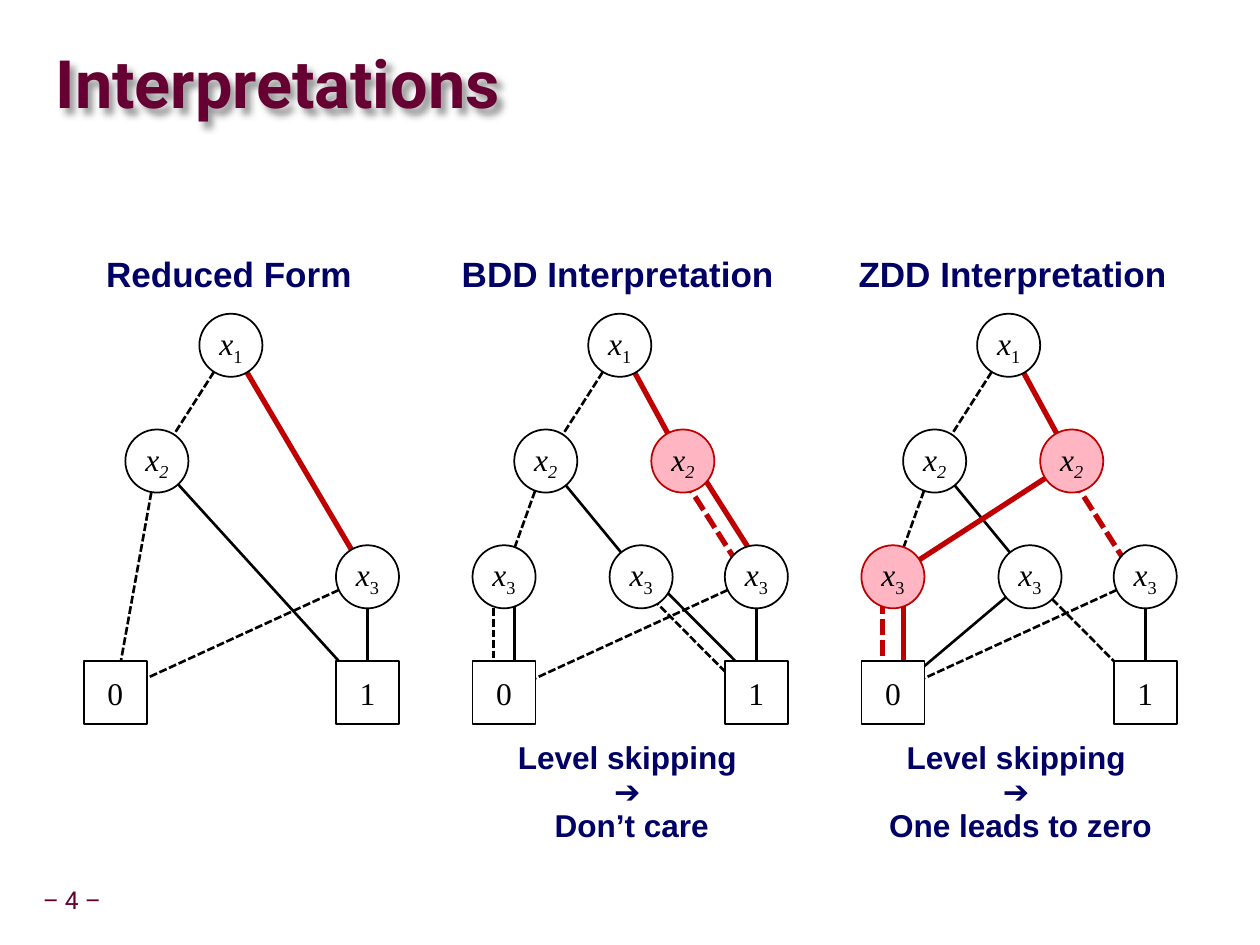
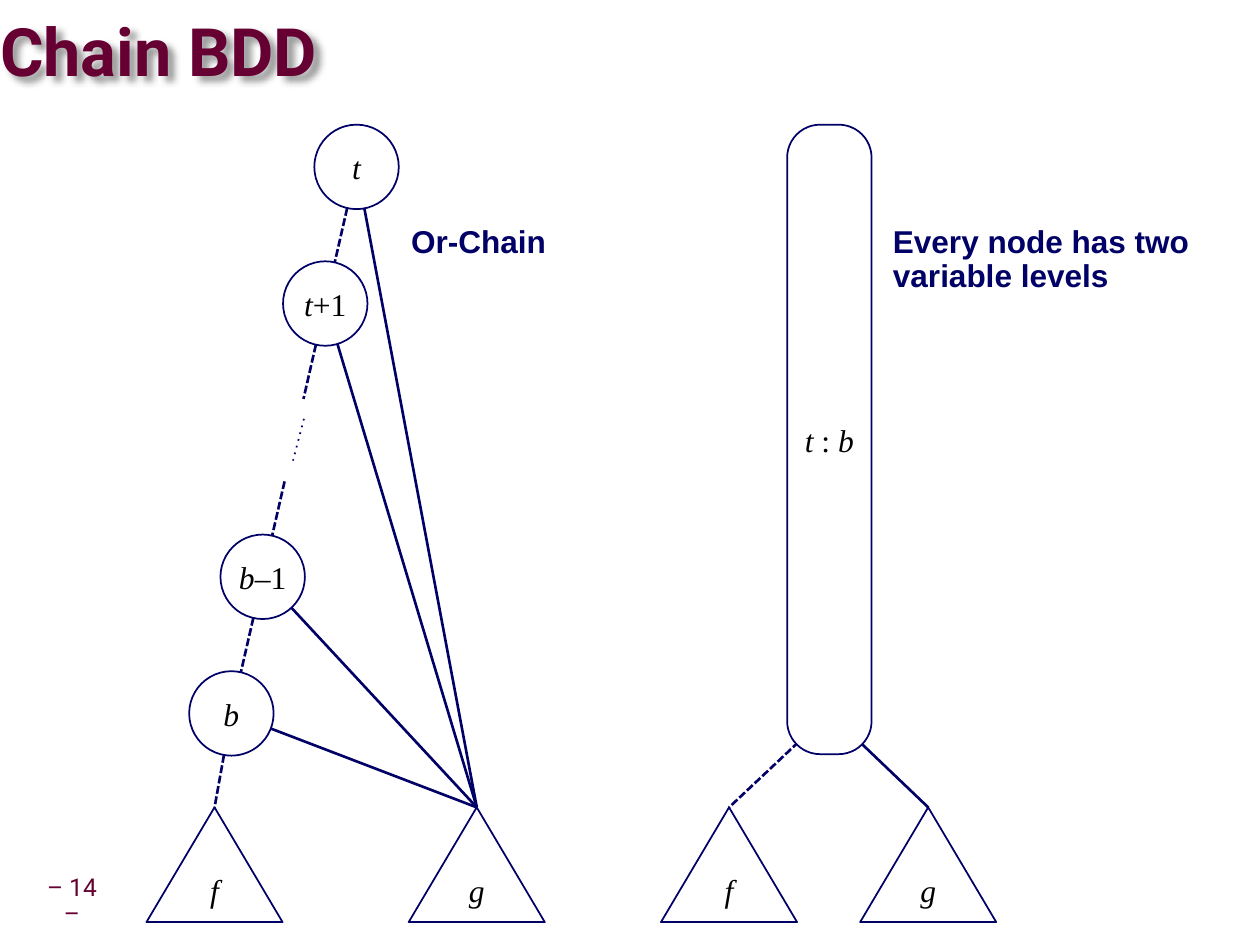
from lxml import etree
from pptx import Presentation
from pptx import util as u
from pptx.dml.color import RGBColor
from pptx.enum import shapes, text
from pptx.oxml.ns import qn

MAROON = RGBColor(0x66, 0x00, 0x33)
NAVY = RGBColor(0x00, 0x00, 0x66)
RED = RGBColor(0xC0, 0x00, 0x00)
PINK = RGBColor(0xFF, 0xB6, 0xC2)
BLACK = RGBColor(0x00, 0x00, 0x00)
WHITE = RGBColor(0xFF, 0xFF, 0xFF)

TITLE = dict(name="Roboto", size=u.Pt(38), bold=True, rgb=MAROON)
FOOTER = dict(name="Roboto", size=u.Pt(14), rgb=MAROON)
HEADING = dict(name="Arial", size=u.Pt(20), bold=True, rgb=NAVY)
CAPTION = dict(HEADING, size=u.Pt(18))
UPRIGHT = dict(name="Times New Roman", size=u.Pt(18), italic=False, rgb=BLACK)
ITALIC = dict(UPRIGHT, italic=True)

SOLID = dict(color=BLACK, width=1.5)
DASHED = dict(SOLID, dash="sysDash")
RED_SOLID = dict(color=RED, width=3)
RED_DASHED = dict(RED_SOLID, dash="sysDash")
NAVY_SOLID = dict(color=NAVY, width=1.5)
NAVY_DASHED = dict(NAVY_SOLID, dash="sysDash")
NAVY_DOTTED = dict(color=NAVY, width=1, dash="dot")

CENTER = text.PP_ALIGN.CENTER
LEFT = text.PP_ALIGN.LEFT
OVAL = shapes.MSO_SHAPE.OVAL
RECT = shapes.MSO_SHAPE.RECTANGLE
TRIANGLE = shapes.MSO_SHAPE.ISOSCELES_TRIANGLE
BAR = shapes.MSO_SHAPE.ROUNDED_RECTANGLE

NODE = 1.27
GAP = 0.21
ROWS = [1.9 + 2.33 * i for i in range(4)]
SPOTS = {
    "top": (2.97, ROWS[0]),
    "left2": (1.48, ROWS[1]), "right2": (4.24, ROWS[1]),
    "left3": (0.64, ROWS[2]), "mid3": (3.4, ROWS[2]), "right3": (5.72, ROWS[2]),
    "zero": (0.64, ROWS[3]), "one": (5.72, ROWS[3]),
}

REDUCED = dict(
    heading="Reduced Form", heading_x=2.93, heading_w=5.51, caption=[],
    nodes=["top", "left2", "right3"], marked=[],
    edges=[
        ("top", "right3", 0, RED_SOLID),
        ("top", "left2", 0, DASHED),
        ("left2", "zero", 0, DASHED),
        ("right3", "zero", 0, DASHED),
        ("right3", "one", 0, SOLID),
        ("left2", "one", 0, SOLID),
    ])

SHARED_EDGES = [
    ("top", "left2", 0, DASHED),
    ("left2", "left3", 0, DASHED),
    ("right3", "zero", 0, DASHED),
    ("right3", "one", 0, SOLID),
    ("left2", "mid3", 0, SOLID),
    ("top", "right2", 0, RED_SOLID),
    ("right2", "right3", -GAP, RED_DASHED),
]
ALL_NODES = ["top", "left2", "right2", "left3", "mid3", "right3"]

BDD = dict(
    heading="BDD Interpretation", heading_x=2.93, heading_w=6.83,
    caption=["Level skipping ", "➔ ", "Don’t care"], caption_w=5.16,
    nodes=ALL_NODES, marked=["right2"],
    edges=SHARED_EDGES + [
        ("left3", "zero", -GAP, DASHED),
        ("left3", "zero", GAP, SOLID),
        ("mid3", "one", -GAP, DASHED),
        ("mid3", "one", GAP, SOLID),
        ("right2", "right3", GAP, RED_SOLID),
    ])

ZDD = dict(
    heading="ZDD Interpretation", heading_x=3.05, heading_w=6.76,
    caption=["Level skipping ", "➔ ", "One leads to zero"], caption_w=5.87,
    nodes=ALL_NODES, marked=["right2", "left3"],
    edges=SHARED_EDGES + [
        ("mid3", "one", 0, DASHED),
        ("mid3", "zero", 0, SOLID),
        ("left3", "zero", -GAP, RED_DASHED),
        ("left3", "zero", GAP, RED_SOLID),
        ("right2", "left3", 0, RED_SOLID),
    ])


def apply(obj, values):
    for key, value in values.items():
        if key == "rgb":
            obj.color.rgb = value
        else:
            setattr(obj, key, value)


def add_runs(p, runs):
    for words, values in runs:
        r = p.add_run()
        r.text = words
        apply(r.font, values)


def add_label(s, box, lines, font, align=LEFT, wrap=False):
    sp = s.shapes.add_textbox(*map(u.Cm, box))
    tf = sp.text_frame
    tf.word_wrap = wrap
    for i, line in enumerate(lines):
        p = tf.paragraphs[0] if i == 0 else tf.add_paragraph()
        apply(p, dict(alignment=align, line_spacing=0.9))
        add_runs(p, [(line, font)])
    return sp


def add_edge(s, start, end, style):
    ends = [u.Cm(v) for v in (*start, *end)]
    c = s.shapes.add_connector(shapes.MSO_CONNECTOR.STRAIGHT, *ends)
    c.line.color.rgb = style["color"]
    c.line.width = u.Pt(style["width"])
    pr = c._element.spPr
    if "dash" in style:
        etree.SubElement(pr.get_or_add_ln(), qn("a:prstDash"), val=style["dash"])
    etree.SubElement(pr, qn("a:effectLst"))


def add_node(s, kind, box, runs, line=BLACK, fill=WHITE, anchor=text.MSO_ANCHOR.MIDDLE):
    sp = s.shapes.add_shape(kind, *map(u.Cm, box))
    sp.shadow.inherit = False
    sp.fill.solid()
    sp.fill.fore_color.rgb = fill
    if line is None:
        sp.line.fill.background()
    else:
        sp.line.color.rgb = line
        sp.line.width = u.Pt(1)
    tf = sp.text_frame
    apply(tf, dict(margin_left=0, margin_right=0, vertical_anchor=anchor, word_wrap=True))
    tf.paragraphs[0].alignment = CENTER
    add_runs(tf.paragraphs[0], runs)
    return sp


def centered(x, y, size):
    return x - size / 2, y - size / 2, size, size


def add_slide(prs, title, left, top, number):
    s = prs.slides.add_slide(prs.slide_layouts[5])
    sp = s.shapes.title
    apply(sp, dict(left=u.Cm(left), top=u.Cm(top), width=u.Cm(24.18), height=u.Cm(2.16)))
    sp.fill.background()
    effects = etree.SubElement(sp._element.spPr, qn("a:effectLst"))
    shadow = etree.SubElement(effects, qn("a:outerShdw"), blurRad="50800",
                              dist="53900", dir="2700000", algn="tl", rotWithShape="0")
    color = etree.SubElement(shadow, qn("a:srgbClr"), val="000000")
    etree.SubElement(color, qn("a:alpha"), val="40000")
    tf = sp.text_frame
    apply(tf, dict(margin_left=0, margin_right=0, margin_top=0, margin_bottom=0,
                   auto_size=text.MSO_AUTO_SIZE.NONE, word_wrap=True,
                   vertical_anchor=text.MSO_ANCHOR.MIDDLE))
    apply(tf.paragraphs[0], dict(alignment=LEFT, line_spacing=0.87))
    add_runs(tf.paragraphs[0], [(title, TITLE)])

    footer = add_label(s, (0.65, 17.75, 1.6, 0.79), [f"– {number} –"], FOOTER, CENTER, True)
    apply(footer.text_frame, dict(margin_left=u.Cm(0.13), margin_right=u.Cm(0.13),
                                  vertical_anchor=text.MSO_ANCHOR.MIDDLE))
    return s


def draw_diagram(s, left, top, diagram):
    def at(name, dx=0):
        x, y = SPOTS[name]
        return left + x + dx, top + y

    w = diagram["heading_w"]
    add_label(s, (left + diagram["heading_x"] - w / 2, top, w, 1.02),
              [diagram["heading"]], HEADING, CENTER)
    for start, end, dx, style in diagram["edges"]:
        add_edge(s, at(start, dx), at(end, dx), style)
    for name in diagram["nodes"]:
        level = "1" if name == "top" else name[-1]
        marked = name in diagram["marked"]
        sub = ITALIC if level == "2" else UPRIGHT
        sp = add_node(s, OVAL, centered(*at(name), NODE), [("x", ITALIC), (level, sub)],
                      RED if marked else BLACK, PINK if marked else WHITE)
        r = sp.text_frame.paragraphs[0].runs[1]
        r._r.get_or_add_rPr().set("baseline", "-25000")
    for name, value in (("zero", "0"), ("one", "1")):
        add_node(s, RECT, centered(*at(name), NODE), [(value, UPRIGHT)])
    if diagram["caption"]:
        w = diagram["caption_w"]
        add_label(s, (left + 3.21 - w / 2, top + 9.76, w, 2.34),
                  diagram["caption"], CAPTION, CENTER)


def draw_leaves(s, left, top, spread):
    for name, dx in (("f", 0), ("g", spread)):
        add_node(s, TRIANGLE, (left + dx, top + 13.74, 2.74, 2.31), [(name, ITALIC)],
                 NAVY, anchor=text.MSO_ANCHOR.TOP)


def draw_chain(s, left, top):
    spots = [(left + 4.23 - 0.63 * i, top + 0.85 + 2.75 * i) for i in range(5)]
    f, g = [(left + x, top + 13.74) for x in (1.37, 6.65)]
    for start, end in zip(spots, spots[1:] + [f]):
        add_edge(s, start, end, NAVY_DASHED)
    labels = [
        [("t", ITALIC)],
        [("t", ITALIC), ("+1", UPRIGHT)],
        [],
        [("b", ITALIC), ("–1", UPRIGHT)],
        [("b", ITALIC)],
    ]
    for spot, runs in zip(spots, labels):
        if runs:
            add_edge(s, spot, g, NAVY_SOLID)
    for spot, runs in zip(spots, labels):
        add_node(s, OVAL, centered(*spot, 1.7), runs, NAVY if runs else None)
    add_edge(s, (left + 3.17, top + 5.92), (left + 2.95, top + 6.76), NAVY_DOTTED)
    draw_leaves(s, left, top, 5.28)
    add_label(s, (left + 5.08, top + 1.91, 3.25, 0.94), ["Or-Chain"], CAPTION)


def draw_merged(s, left, top):
    hub = left + 3.39, top + 11.84
    for x, style in ((1.37, NAVY_DASHED), (5.38, NAVY_SOLID)):
        add_edge(s, hub, (left + x, top + 13.74), style)
    draw_leaves(s, left, top, 4.01)
    bar = add_node(s, BAR, (left + 2.54, top, 1.7, 12.67),
                   [("t ", ITALIC), (": ", UPRIGHT), ("b", ITALIC)], NAVY)
    bar.adjustments[0] = 0.39
    add_label(s, (left + 4.42, top + 1.91, 7.44, 1.65),
              ["Every node has two variable levels"], CAPTION, wrap=True)


def main():
    prs = Presentation()
    apply(prs, dict(slide_width=u.Cm(25.37), slide_height=u.Cm(19.02)))

    s = add_slide(prs, "Interpretations", 1.12, 0.69, 4)
    for i, diagram in enumerate((REDUCED, BDD, ZDD)):
        draw_diagram(s, 1.68 + 7.83 * i, 5.05, diagram)

    s = add_slide(prs, "Chain BDD", 0, 0.03, 14)
    draw_chain(s, 2.95, 2.51)
    draw_merged(s, 13.31, 2.51)

    prs.save("out.pptx")


if __name__ == "__main__":
    main()
